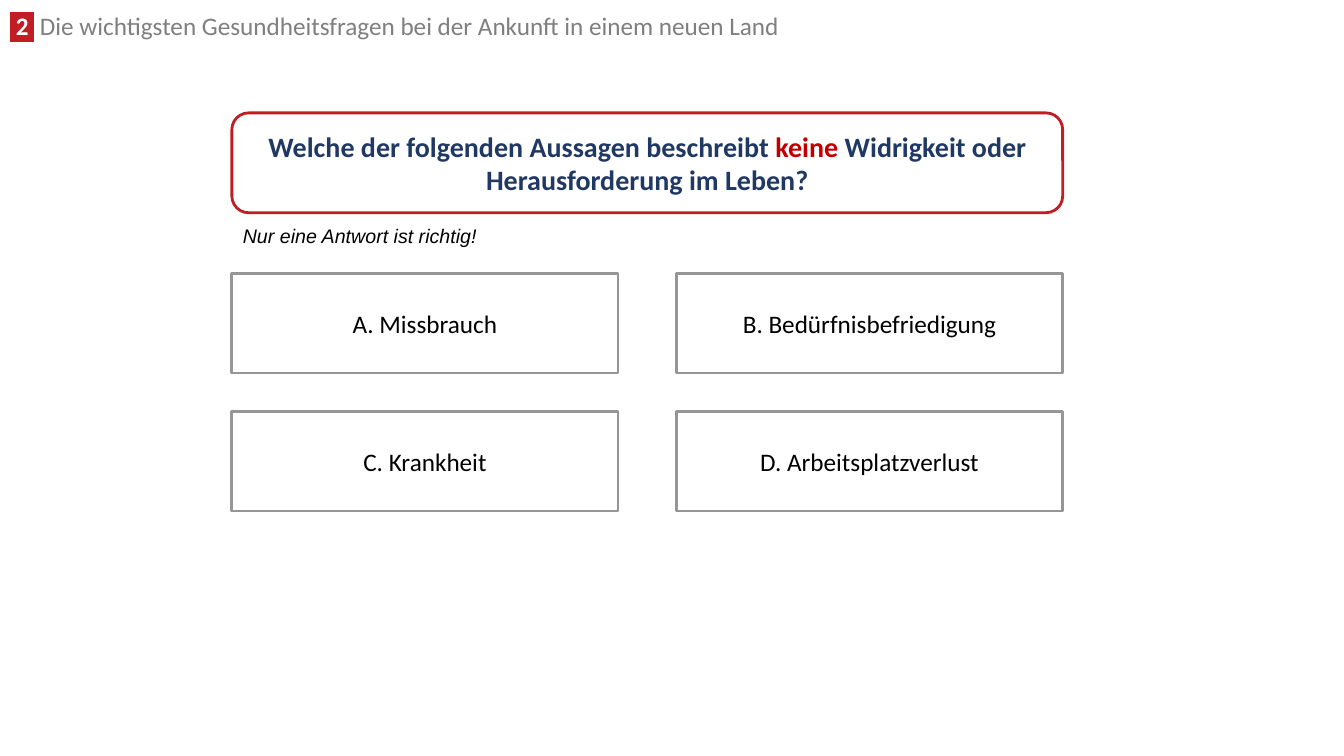
from lxml import etree
from pptx import Presentation
from pptx.dml.color import RGBColor
from pptx.enum import shapes, text
from pptx.oxml import ns
from pptx.util import Inches, Pt

HUES = {"red": "C01E24", "alert": "C00000", "navy": "203864", "gray": "7F7F7F",
        "edge": "969696", "white": "FFFFFF", "black": "000000"}


def write(frame, runs, size, face="Calibri", bold=False):
    par = frame.paragraphs[0]
    for words, hue in runs:
        run = par.add_run()
        run.text = words
        run.font.size = Pt(size)
        run.font.name = face
        run.font.bold = bold
        run.font.color.rgb = RGBColor.from_string(HUES[hue])
    return par


def panel(kind, left, top, width, edge, runs, size, bold=False):
    box = slide.shapes.add_shape(kind, Inches(left), Inches(top), Inches(width), Inches(0.99))
    box.shadow.inherit = False
    box.fill.solid()
    box.fill.fore_color.rgb = RGBColor.from_string(HUES["white"])
    box.line.color.rgb = RGBColor.from_string(HUES[edge])
    box.line.width = Pt(2)
    frame = box.text_frame
    frame.word_wrap = True
    frame.vertical_anchor = text.MSO_ANCHOR.MIDDLE
    write(frame, runs, size, bold=bold).alignment = text.PP_ALIGN.CENTER


deck = Presentation()
deck.slide_width = Inches(13.33)
deck.slide_height = Inches(7.5)
slide = deck.slides.add_slide(deck.slide_layouts[5])

title = slide.shapes.title
title.left, title.top = Inches(0), Inches(0.11)
title.width, title.height = Inches(8.57), Inches(0.34)
frame = title.text_frame
frame.word_wrap = True
frame.auto_size = text.MSO_AUTO_SIZE.SHAPE_TO_FIT_TEXT
frame.vertical_anchor = text.MSO_ANCHOR.TOP
head = write(frame, [
    (" 2 ", "white"),
    (" Die wichtigsten Gesundheitsfragen bei der Ankunft in einem neuen Land", "gray"),
], 18)
head.alignment = text.PP_ALIGN.LEFT
head.line_spacing = 0.8
badge = head.runs[0]
badge.font.bold = True
mark = etree.Element(ns.qn("a:highlight"))
etree.SubElement(mark, ns.qn("a:srgbClr"), val=HUES["red"])
badge.font._element.find(ns.qn("a:solidFill")).addnext(mark)

panel(shapes.MSO_SHAPE.ROUNDED_RECTANGLE, 2.3, 1.12, 8.24, "red", [
    ("Welche der folgenden Aussagen beschreibt ", "navy"),
    ("keine", "alert"),
    (" Widrigkeit oder Herausforderung im Leben?", "navy"),
], 20, bold=True)

answers = ["A. Missbrauch", "B. Bedürfnisbefriedigung", "C. Krankheit", "D. Arbeitsplatzverlust"]
for i, answer in enumerate(answers):
    row, col = divmod(i, 2)
    panel(shapes.MSO_SHAPE.RECTANGLE, 2.3 + col * 4.41, 2.71 + row * 1.37, 3.83, "edge",
          [(answer, "black")], 18)

hint = slide.shapes.add_textbox(Inches(2.31), Inches(2.17), Inches(2.54), Inches(0.57))
hint.text_frame.word_wrap = False
hint.text_frame.auto_size = text.MSO_AUTO_SIZE.SHAPE_TO_FIT_TEXT
note = write(hint.text_frame, [("Nur eine Antwort ist richtig!", "black")], 14, "Arial")
note.runs[0].font.italic = True

deck.save("out.pptx")
